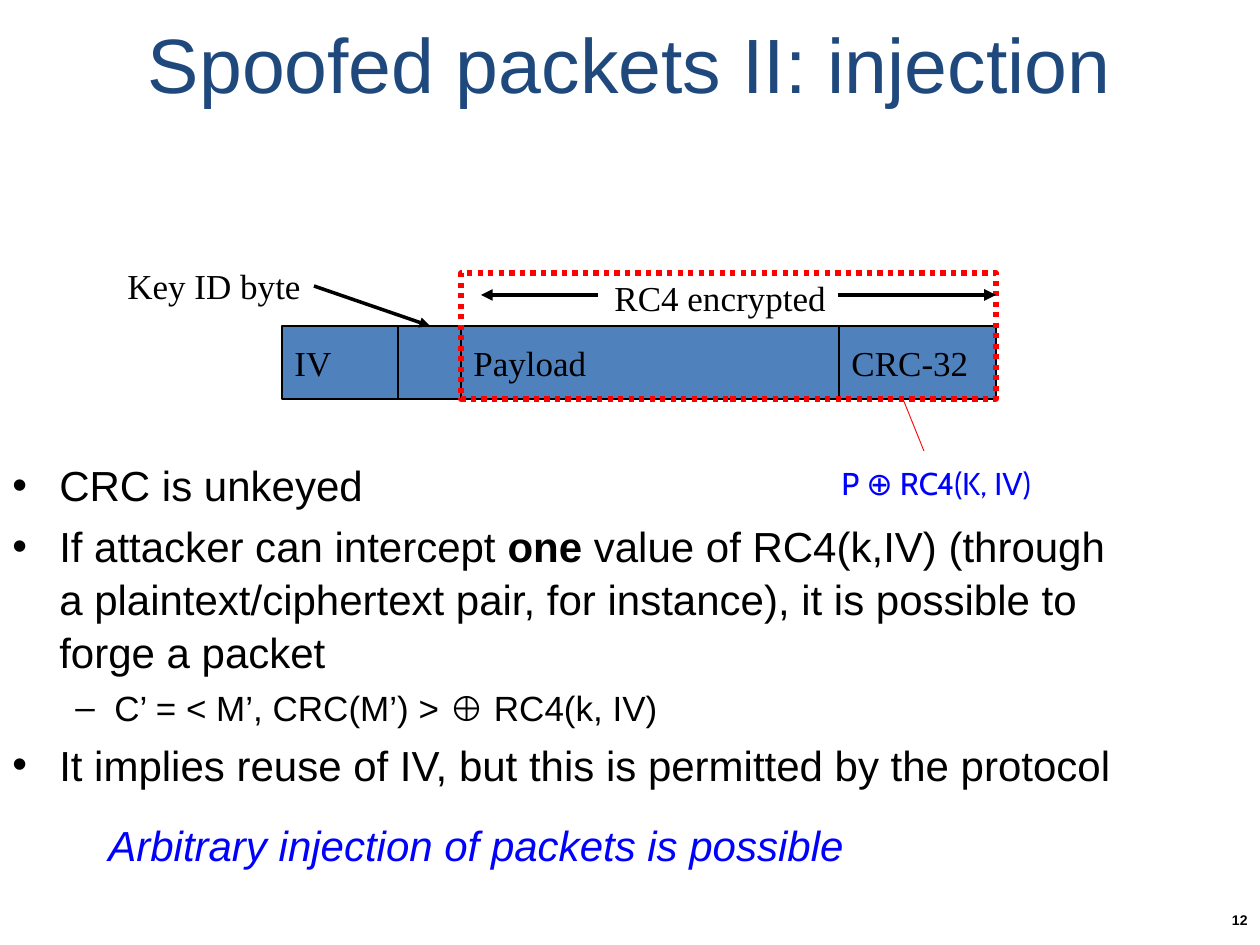
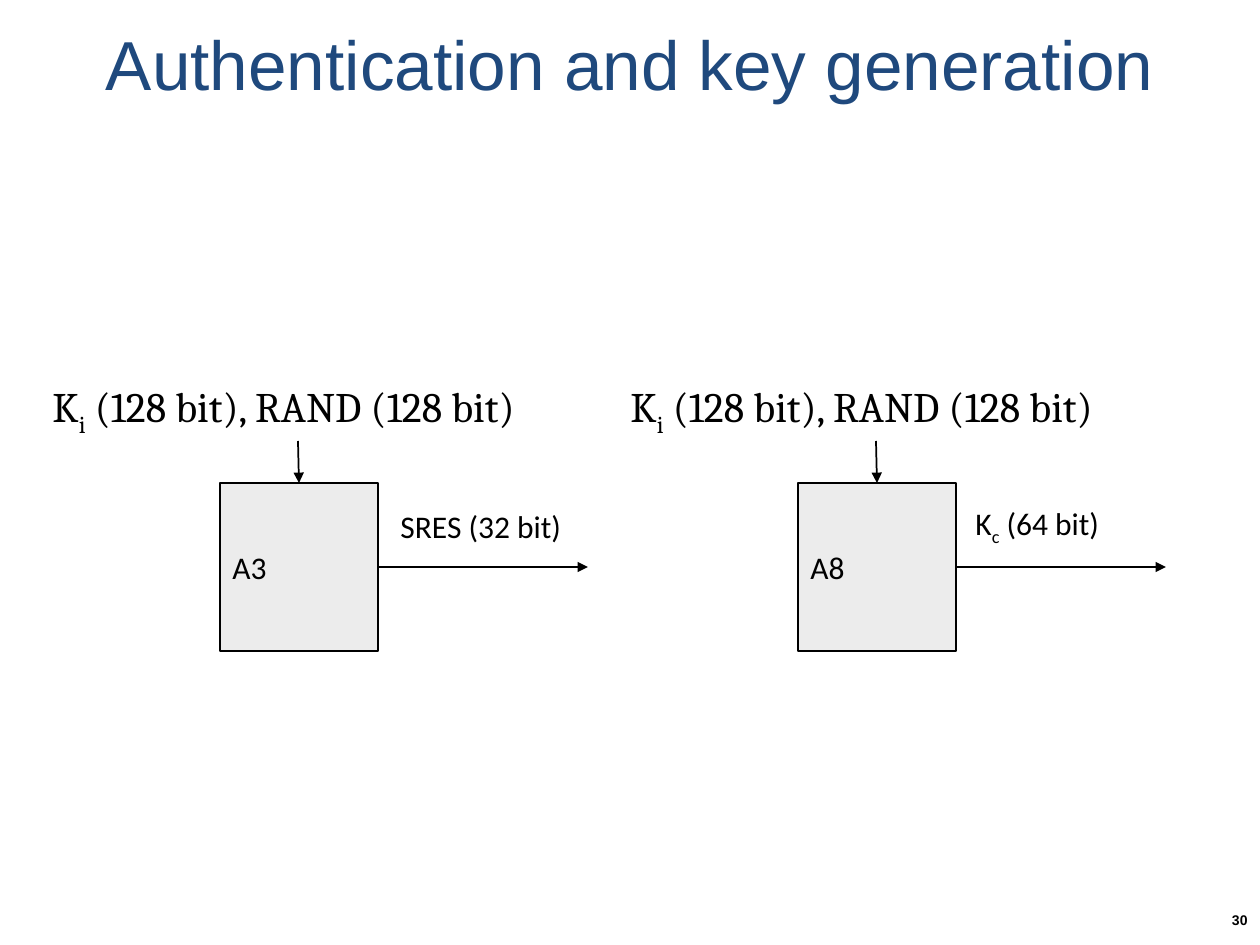
import dataclasses

import pptx
import pptx.dml.color
import pptx.enum.dml
import pptx.enum.shapes
import pptx.enum.text
import pptx.oxml.ns
import pptx.util
from lxml import etree

EMU_PER_PX = 914400 / 126
ALIGN = pptx.enum.text.PP_ALIGN
ANCHOR = pptx.enum.text.MSO_ANCHOR


@dataclasses.dataclass(frozen=True)
class Theme:
    title: str = "1F497D"
    ink: str = "000000"
    note: str = "0000FF"
    mark: str = "FF0000"
    field: str = "4F81BD"
    cipher: str = "ECECEC"
    sans: str = "Arial"
    serif: str = "Times New Roman"
    formula: str = "Cabin"
    cipher_font: str = "Calibri"
    input_font: str = "Cambria"
    title_size: float = 44
    long_title_size: float = 39.6
    body_size: float = 24
    sub_size: float = 20
    label_size: float = 18
    number_size: float = 8


THEME = Theme()


def px(length):
    return pptx.util.Emu(round(length * EMU_PER_PX))


def rgb(color):
    return pptx.dml.color.RGBColor.from_string(color)


def add_child(parent, tag, **attributes):
    return etree.SubElement(parent, pptx.oxml.ns.qn(tag), attributes)


def add_span(para, text, font, size, color=THEME.ink, bold=False, italic=False, subscript=False):
    span = para.add_run()
    span.text = text
    span.font.name = font
    span.font.size = pptx.util.Pt(size)
    span.font.bold = bold
    span.font.italic = italic
    span.font.color.rgb = rgb(color)
    if subscript:
        span.font._element.set("baseline", "-25000")


def add_text(page, area, spans, font, size, color=THEME.ink, align=ALIGN.LEFT, **style):
    box = page.shapes.add_textbox(*map(px, area))
    box.text_frame.word_wrap = True
    box.text_frame.vertical_anchor = ANCHOR.MIDDLE
    para = box.text_frame.paragraphs[0]
    para.alignment = align
    for text, changes in spans:
        add_span(para, text, font, size, color, **{**style, **changes})


def add_box(page, area, fill=None, line=THEME.ink, width=1, text="", font=THEME.serif, size=THEME.sub_size):
    box = page.shapes.add_shape(pptx.enum.shapes.MSO_SHAPE.RECTANGLE, *map(px, area))
    box.shadow.inherit = False
    box.line.color.rgb = rgb(line)
    box.line.width = pptx.util.Pt(width)
    if fill:
        box.fill.solid()
        box.fill.fore_color.rgb = rgb(fill)
    else:
        box.fill.background()
    if text:
        box.text_frame.vertical_anchor = ANCHOR.MIDDLE
        para = box.text_frame.paragraphs[0]
        para.alignment = ALIGN.LEFT
        add_span(para, text, font, size)
    return box


def add_line(page, start, end, width, color=THEME.ink, arrow=True):
    line = page.shapes.add_connector(
        pptx.enum.shapes.MSO_CONNECTOR.STRAIGHT, *map(px, (*start, *end)))
    line.line.color.rgb = rgb(color)
    line.line.width = pptx.util.Pt(width)
    if arrow:
        add_child(line.line._get_or_add_ln(), "a:tailEnd", type="triangle")
    add_child(line._element.spPr, "a:effectLst")


def add_bullet(frame, first, level, spans):
    para = frame.paragraphs[0] if first else frame.add_paragraph()
    margin, hang, mark, size = (
        (47, 47, "•", THEME.body_size),
        (102, 39, "–", THEME.sub_size),
    )[level]
    para.level = level
    para.space_before = pptx.util.Pt(size * 0.2)
    para.line_spacing = 1.05
    properties = para._p.get_or_add_pPr()
    properties.set("marL", str(px(margin)))
    properties.set("indent", str(-px(hang)))
    add_child(properties, "a:buFont", typeface=THEME.sans)
    add_child(properties, "a:buChar", char=mark)
    for text, bold in spans:
        add_span(para, text, THEME.sans, size, bold=bold)


def add_bullets(page, area, items):
    box = page.shapes.add_textbox(*map(px, area))
    box.text_frame.word_wrap = True
    for index, (level, spans) in enumerate(items):
        add_bullet(box.text_frame, index == 0, level, spans)


def add_page(deck, title, number, title_size=THEME.title_size):
    page = deck.slides.add_slide(deck.slide_layouts[6])
    add_text(page, (63, 0, 1134, 126), [(title, {})], THEME.sans, title_size,
             THEME.title, ALIGN.CENTER)
    add_text(page, (1173, 895, 87, 50), [(number, {})], THEME.sans, THEME.number_size,
             align=ALIGN.RIGHT, bold=True)
    return page


def add_packet(page):
    left, top, height = 282, 326, 73
    for text, width in (("IV", 116), ("", 63), ("Payload", 378), ("CRC-32", 157)):
        add_box(page, (left, top, width, height), THEME.field, text=text)
        left += width
    add_text(page, (115, 258, 208, 54), [("Key ID byte", {})], THEME.serif, THEME.sub_size)
    add_line(page, (314, 286), (430, 326), 2)
    encrypted = add_box(page, (461, 273, 535, 126), line=THEME.mark, width=3)
    encrypted.line.dash_style = pptx.enum.dml.MSO_LINE.ROUND_DOT
    add_text(page, (602, 270, 245, 54), [("RC4 encrypted", {})], THEME.serif, THEME.sub_size)
    add_line(page, (598, 295), (481, 295), 2.25)
    add_line(page, (838, 295), (996, 295), 2.25)
    add_line(page, (924, 451), (903, 399), 0.5, THEME.mark, arrow=False)
    add_text(page, (829, 451, 305, 63), [("P ⊕ RC4(K, IV)", {})], THEME.formula,
             THEME.label_size, THEME.note)


def add_cipher(page, left, name, output, output_left):
    inputs = [("K", {}), ("i", {"subscript": True}), (" (128 bit), RAND (128 bit)", {})]
    add_text(page, (left, 378, 517, 63), inputs, THEME.input_font, THEME.body_size)
    add_box(page, (left + 180, 483, 158, 168), THEME.cipher, text=name,
            font=THEME.cipher_font, size=THEME.label_size)
    add_line(page, (left + 258, 441), (left + 259, 483), 1)
    add_line(page, (left + 338, 567), (left + 548, 567), 1)
    add_text(page, (output_left, 494, 230, 63), output, THEME.cipher_font, THEME.label_size)


def build_injection(deck):
    page = add_page(deck, "Spoofed packets II: injection", "12")
    add_bullets(page, (0, 451, 1134, 431), [
        (0, [("CRC is unkeyed", False)]),
        (0, [("If attacker can intercept ", False), ("one", True),
             (" value of RC4(k,IV) (through a plaintext/ciphertext pair, for instance), "
              "it is possible to forge a packet", False)]),
        (1, [("C’ = < M’, CRC(M’) > ", False), ("⊕", True), (" RC4(k, IV)", False)]),
        (0, [("It implies reuse of IV, but this is permitted by the protocol", False)]),
    ])
    add_packet(page)
    add_text(page, (96, 813, 1070, 63), [("Arbitrary injection of packets is possible", {})],
             THEME.sans, THEME.body_size, THEME.note, italic=True)


def build_key_generation(deck):
    page = add_page(deck, "Authentication and key generation", "30", THEME.long_title_size)
    add_cipher(page, 40, "A3", [("SRES (32 bit)", {})], 388)
    add_cipher(page, 618, "A8", [("K", {}), ("c", {"subscript": True}), (" (64 bit)", {})], 963)


def main():
    deck = pptx.Presentation()
    deck.slide_width = px(1260)
    deck.slide_height = px(945)
    build_injection(deck)
    build_key_generation(deck)
    deck.save("out.pptx")


if __name__ == "__main__":
    main()
